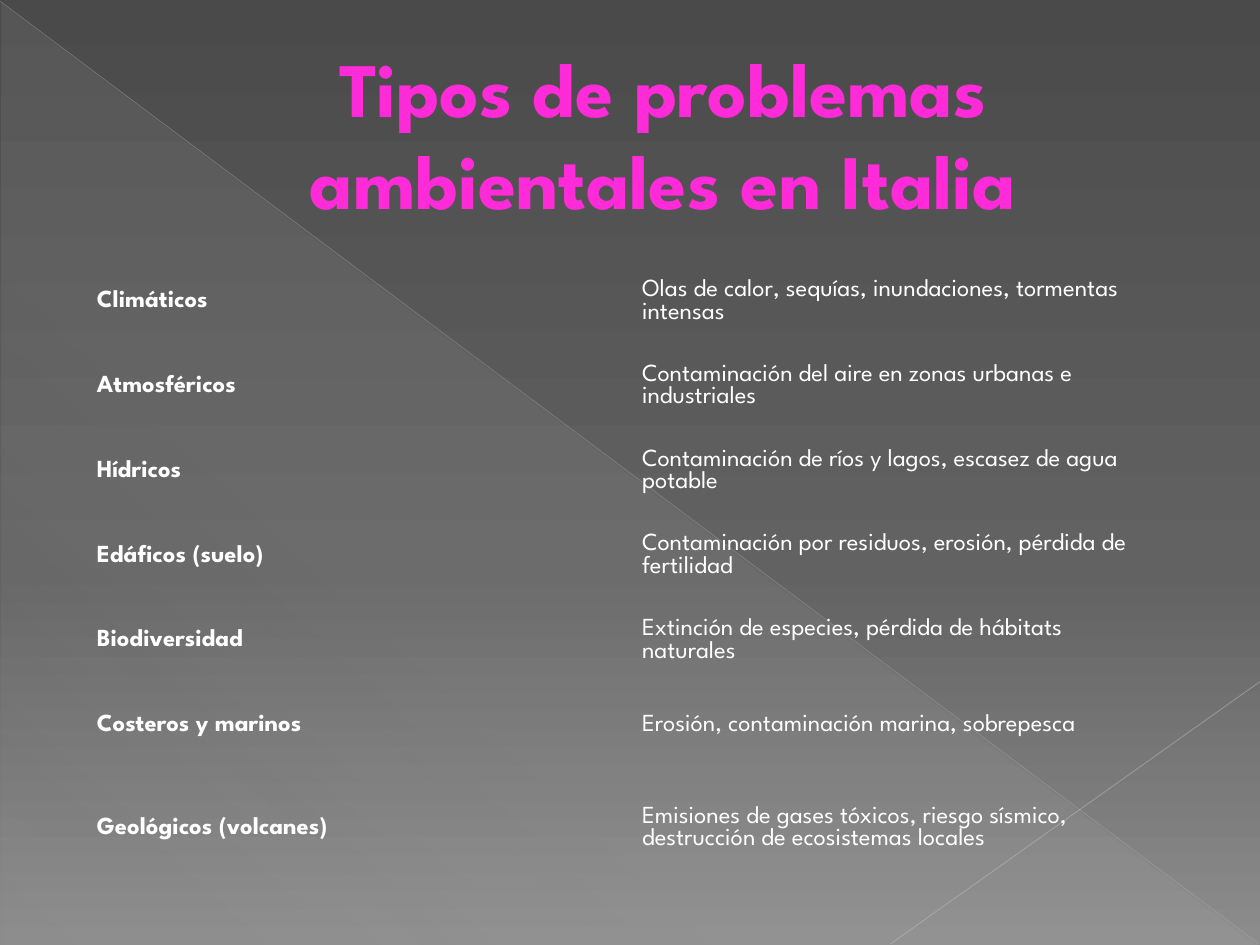
"""Build a slide listing the types of environmental problems in Italy."""
from lxml import etree
from pptx import Presentation, util as u
from pptx.dml.color import RGBColor
from pptx.enum import shapes, text
from pptx.oxml import parse_xml
from pptx.oxml.ns import nsdecls, qn

Pt = u.Pt
COLORS = {
    "title": "FF2BD8", "outline": "B12761", "body": "FFFFFF", "veil": "D2D2D2",
    "dark": "4A4A4A", "middle": "626262", "light": "8C8C8C",
    "diagonal": "BFBFBF", "corner": "C6C6C6",
}
FONT = "League Spartan"
PROBLEMS = [
    ("Climáticos", "Olas de calor, sequías, inundaciones, tormentas intensas"),
    ("Atmosféricos", "Contaminación del aire en zonas urbanas e industriales"),
    ("Hídricos", "Contaminación de ríos y lagos, escasez de agua potable"),
    ("Edáficos (suelo)", "Contaminación por residuos, erosión, pérdida de fertilidad"),
    ("Biodiversidad", "Extinción de especies, pérdida de hábitats naturales"),
    ("Costeros y marinos", "Erosión, contaminación marina, sobrepesca"),
    ("Geológicos (volcanes)",
     "Emisiones de gases tóxicos, riesgo sísmico, destrucción de ecosistemas locales"),
]


def write(frame, words, size=14, color="body", bold=False, align=None):
    frame.word_wrap = True
    para = frame.paragraphs[0]
    para.alignment = align
    span = para.add_run()
    span.text = words
    span.font.name = FONT
    span.font.size = Pt(size)
    span.font.bold = bold
    span.font.color.rgb = RGBColor.from_string(COLORS[color])
    return para, span


def shade(fill, owner, angle, stops):
    fill.gradient()
    fill.gradient_angle = 360 - angle
    stop_list = owner.find(".//" + qn("a:gsLst"))
    for old in list(stop_list):
        stop_list.remove(old)
    for position, color, opacity in stops:
        stop_list.append(parse_xml(
            f'<a:gs {nsdecls("a")} pos="{position * 1000}"><a:srgbClr val="{COLORS[color]}">'
            f'<a:alpha val="{opacity * 1000}"/></a:srgbClr></a:gs>'))


deck = Presentation()
deck.slide_width, deck.slide_height = Pt(720), Pt(540)
page = deck.slides.add_slide(deck.slide_layouts[6])
shade(page.background.fill, page.element, 90,
      [(0, "dark", 100), (60, "middle", 100), (100, "light", 100)])

veil = page.shapes.add_shape(
    shapes.MSO_SHAPE.RIGHT_TRIANGLE, Pt(0.7), Pt(1.4), Pt(718.6), Pt(538.6))
veil.shadow.inherit = False
veil.line.fill.background()
shade(veil.fill, veil.element, 133, [(0, "veil", 10), (70, "veil", 8), (100, "veil", 1)])

for start, end, color, width, opacity in [
    ((0, 0.7), (719.3, 539.3), "diagonal", 0.39, 35),
    ((720, 389.5), (509, 539.3), "corner", 0.47, 45),
]:
    line = page.shapes.add_connector(
        shapes.MSO_CONNECTOR.STRAIGHT, *map(Pt, start), *map(Pt, end))
    line.line.width = Pt(width)
    line.line.color.rgb = RGBColor.from_string(COLORS[color])
    tint = line.element.find(".//" + qn("a:srgbClr"))
    etree.SubElement(tint, qn("a:alpha")).set("val", str(opacity * 1000))
    etree.SubElement(line.element.find(qn("p:spPr")), qn("a:effectLst"))

title = page.shapes.add_textbox(Pt(36), Pt(20.9), Pt(648), Pt(110.2))
title.text_frame.vertical_anchor = text.MSO_ANCHOR.MIDDLE
para, span = write(title.text_frame, "Tipos de problemas ambientales en Italia",
                   size=44, color="title", bold=True, align=text.PP_ALIGN.CENTER)
para.line_spacing = Pt(52.6)
para.element if hasattr(para, "element") else None
title.element.find(".//" + qn("a:pPr")).set("marL", str(Pt(38.2)))
title.element.find(".//" + qn("a:rPr")).insert(0, parse_xml(
    f'<a:ln {nsdecls("a")} w="{Pt(0.5)}"><a:solidFill>'
    f'<a:srgbClr val="{COLORS["outline"]}"/></a:solidFill></a:ln>'))

holder = page.shapes.add_table(len(PROBLEMS), 2, Pt(48.2), Pt(148.3), Pt(623), Pt(360))
table = holder.table
table.first_row = table.horz_banding = False
holder.element.find(".//" + qn("a:tableStyleId")).text = "{2D5ABB26-0587-4C30-8999-92F81FD0307C}"
for row, problem in zip(table.rows, PROBLEMS):
    row.height = Pt(69.2 if problem is PROBLEMS[-1] else 48.45)
    for column, (cell, words) in enumerate(zip(row.cells, problem)):
        cell.fill.background()
        cell.vertical_anchor = text.MSO_ANCHOR.MIDDLE
        write(cell.text_frame, words, bold=column == 0)

deck.save("out.pptx")
